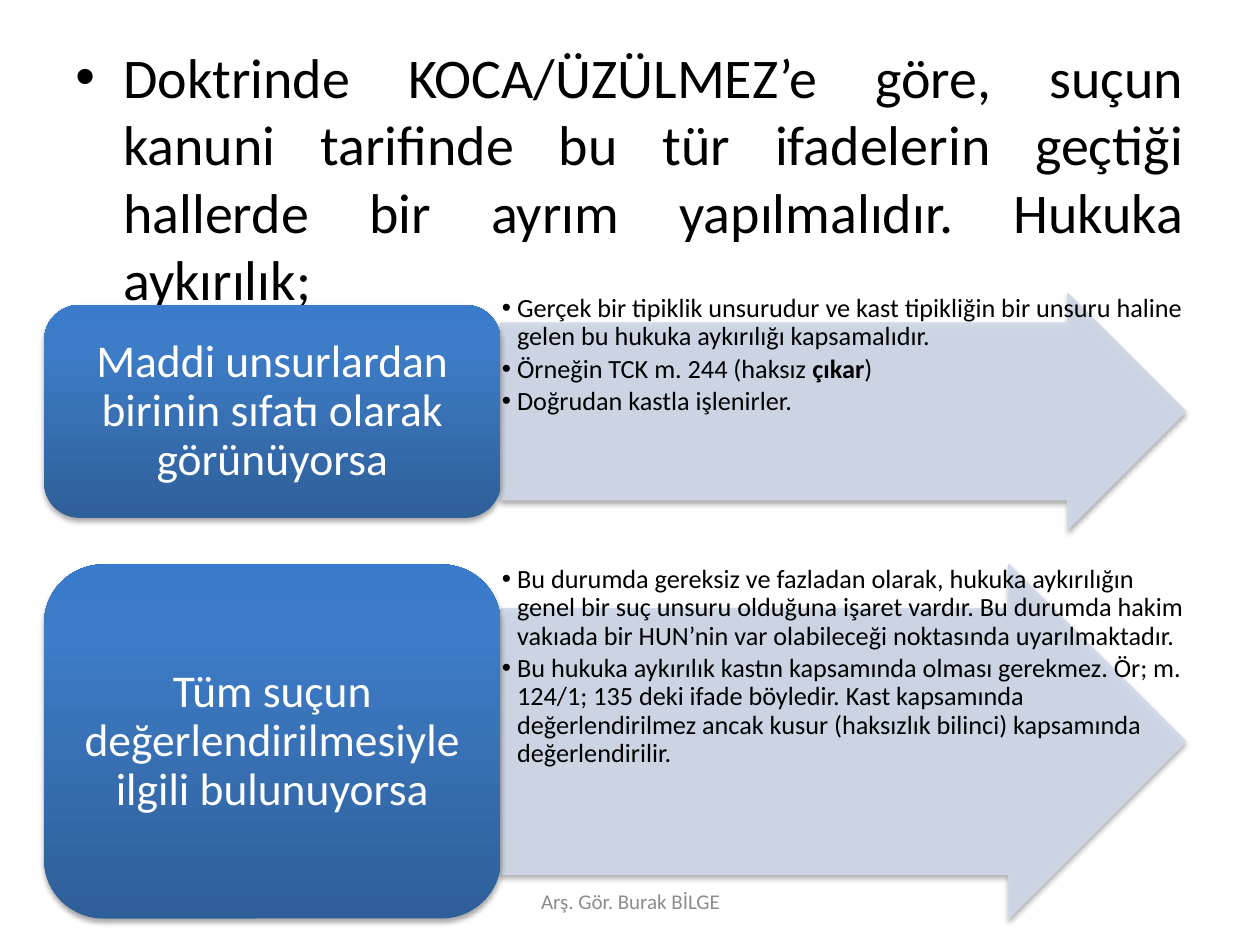
from copy import deepcopy

from lxml.etree import SubElement
from pptx import Presentation
from pptx.dml.color import RGBColor
from pptx.enum.shapes import MSO_SHAPE as Shape
from pptx.enum.text import MSO_ANCHOR as Anchor, PP_ALIGN as Align
from pptx.oxml.ns import qn
from pptx.util import Inches, Pt

BLACK = RGBColor(0x00, 0x00, 0x00)
WHITE = RGBColor(0xFF, 0xFF, 0xFF)
GRAY = RGBColor(0x8C, 0x8C, 0x8C)
PALE_BLUE = RGBColor(0xD0, 0xD8, 0xE8)
LABEL_STOPS = [
    (0, RGBColor(0x2F, 0x5F, 0x99)),
    (0.8, RGBColor(0x3D, 0x7C, 0xC7)),
    (1, RGBColor(0x3A, 0x7C, 0xCB)),
]
FONT = "Calibri"

LEFT, RIGHT = 0.35, 9.41
LABEL_SHARE = 0.4  # label's part of a row's width
INTRO = (
    "Doktrinde KOCA/ÜZÜLMEZ’e göre, suçun kanuni tarifinde bu tür ifadelerin "
    "geçtiği hallerde bir ayrım yapılmalıdır. Hukuka aykırılık;"
)
FOOTER = "Arş. Gör. Burak BİLGE"
# Each row: top, height, label height, label, points; a point is (text, bold) spans.
ROWS = [
    (2.33, 1.87, 1.69, "Maddi unsurlardan birinin sıfatı olarak görünüyorsa", [
        [("Gerçek bir tipiklik unsurudur ve kast tipikliğin bir unsuru haline "
          "gelen bu hukuka aykırılığı kapsamalıdır.", False)],
        [("Örneğin TCK m. 244 (haksız ", False), ("çıkar", True), (")", False)],
        [("Doğrudan kastla işlenirler.", False)],
    ]),
    (4.48, 2.81, 2.81, "Tüm suçun değerlendirilmesiyle ilgili bulunuyorsa", [
        [("Bu durumda gereksiz ve fazladan olarak, hukuka aykırılığın genel bir "
          "suç unsuru olduğuna işaret vardır. Bu durumda hakim vakıada bir "
          "HUN’nin var olabileceği noktasında uyarılmaktadır.", False)],
        [("Bu hukuka aykırılık kastın kapsamında olması gerekmez. Ör; m. 124/1; "
          "135 deki ifade böyledir. Kast kapsamında değerlendirilmez ancak kusur "
          "(haksızlık bilinci) kapsamında değerlendirilir.", False)],
    ]),
]


def set_frame(frame, inset_x, inset_y, anchor=Anchor.TOP):
    frame.word_wrap = True
    frame.margin_left = frame.margin_right = Inches(inset_x)
    frame.margin_top = frame.margin_bottom = Inches(inset_y)
    frame.vertical_anchor = anchor


def style_runs(para, size, color):
    for span in para.runs:
        span.font.name = FONT
        span.font.size = Pt(size)
        span.font.color.rgb = color


def add_bullet(para, indent):
    props = para._p.get_or_add_pPr()
    props.set("marL", str(Inches(indent)))
    props.set("indent", str(-Inches(indent)))
    SubElement(props, qn("a:buFont"), typeface="Arial")
    SubElement(props, qn("a:buChar"), char="•")


def add_shadow(shape):
    shape.shadow.inherit = False
    effects = shape._element.spPr.find(qn("a:effectLst"))
    shadow = SubElement(effects, qn("a:outerShdw"), blurRad=str(Pt(3.1)),
                        dist=str(Pt(1.8)), dir="5400000", rotWithShape="0")
    color = SubElement(shadow, qn("a:srgbClr"), val=str(BLACK))
    SubElement(color, qn("a:alpha"), val="35000")


def add_text(page, box, text, size, color, align, anchor=Anchor.TOP):
    frame = page.shapes.add_textbox(*map(Inches, box)).text_frame
    set_frame(frame, 0.1, 0.05, anchor)
    para = frame.paragraphs[0]
    para.text = text
    para.alignment = align
    style_runs(para, size, color)
    return para


def add_arrow(page, box):
    arrow = page.shapes.add_shape(Shape.RIGHT_ARROW, *map(Inches, box))
    arrow.adjustments[0] = 0.75
    arrow.adjustments[1] = 0.5
    arrow.fill.solid()
    arrow.fill.fore_color.rgb = PALE_BLUE
    arrow.line.color.rgb = PALE_BLUE
    arrow.line.width = Pt(0.75)
    for color in arrow._element.spPr.iter(qn("a:srgbClr")):
        SubElement(color, qn("a:alpha"), val="90000")
    add_shadow(arrow)


def add_points(page, box, points):
    frame = page.shapes.add_textbox(*map(Inches, box)).text_frame
    set_frame(frame, 0.01, 0.01)
    for number, spans in enumerate(points):
        para = frame.add_paragraph() if number else frame.paragraphs[0]
        para.line_spacing = 0.9
        para.space_after = Pt(2.25)
        add_bullet(para, 0.12)
        for text, bold in spans:
            span = para.add_run()
            span.text = text
            span.font.bold = bold
        style_runs(para, 15, BLACK)


def add_label(page, box, text):
    label = page.shapes.add_shape(Shape.ROUNDED_RECTANGLE, *map(Inches, box))
    label.fill.gradient()
    label.fill.gradient_angle = 90
    first_stop = next(label._element.spPr.iter(qn("a:gs")))
    first_stop.addnext(deepcopy(first_stop))
    for stop, (position, color) in zip(label.fill.gradient_stops, LABEL_STOPS):
        stop.position = position
        stop.color.rgb = color
    label.line.fill.background()
    add_shadow(label)
    set_frame(label.text_frame, 0.02, 0, Anchor.MIDDLE)
    para = label.text_frame.paragraphs[0]
    para.text = text
    para.alignment = Align.CENTER
    para.line_spacing = 0.9
    style_runs(para, 26, WHITE)


def add_row(page, box, label_height, label, points):
    """Place a label and, to its right, an arrow that carries the points."""
    left, top, width, height = box
    label_width = width * LABEL_SHARE
    arrow_box = (left + label_width, top, width - label_width, height)
    add_arrow(page, arrow_box)
    add_points(page, arrow_box, points)
    label_top = top + (height - label_height) / 2
    add_label(page, (left, label_top, label_width, label_height), label)


def main():
    deck = Presentation()
    deck.slide_width, deck.slide_height = Inches(10), Inches(7.5)
    page = deck.slides.add_slide(deck.slide_layouts[6])
    intro = add_text(page, (0.5, 0.29, 9, 6.41), INTRO, 32, BLACK, Align.JUSTIFY)
    add_bullet(intro, 0.38)
    add_text(page, (3.42, 6.95, 3.17, 0.4), FOOTER, 12, GRAY, Align.CENTER,
             Anchor.MIDDLE)
    for top, height, label_height, label, points in ROWS:
        add_row(page, (LEFT, top, RIGHT - LEFT, height), label_height, label, points)
    deck.save("out.pptx")


if __name__ == "__main__":
    main()
